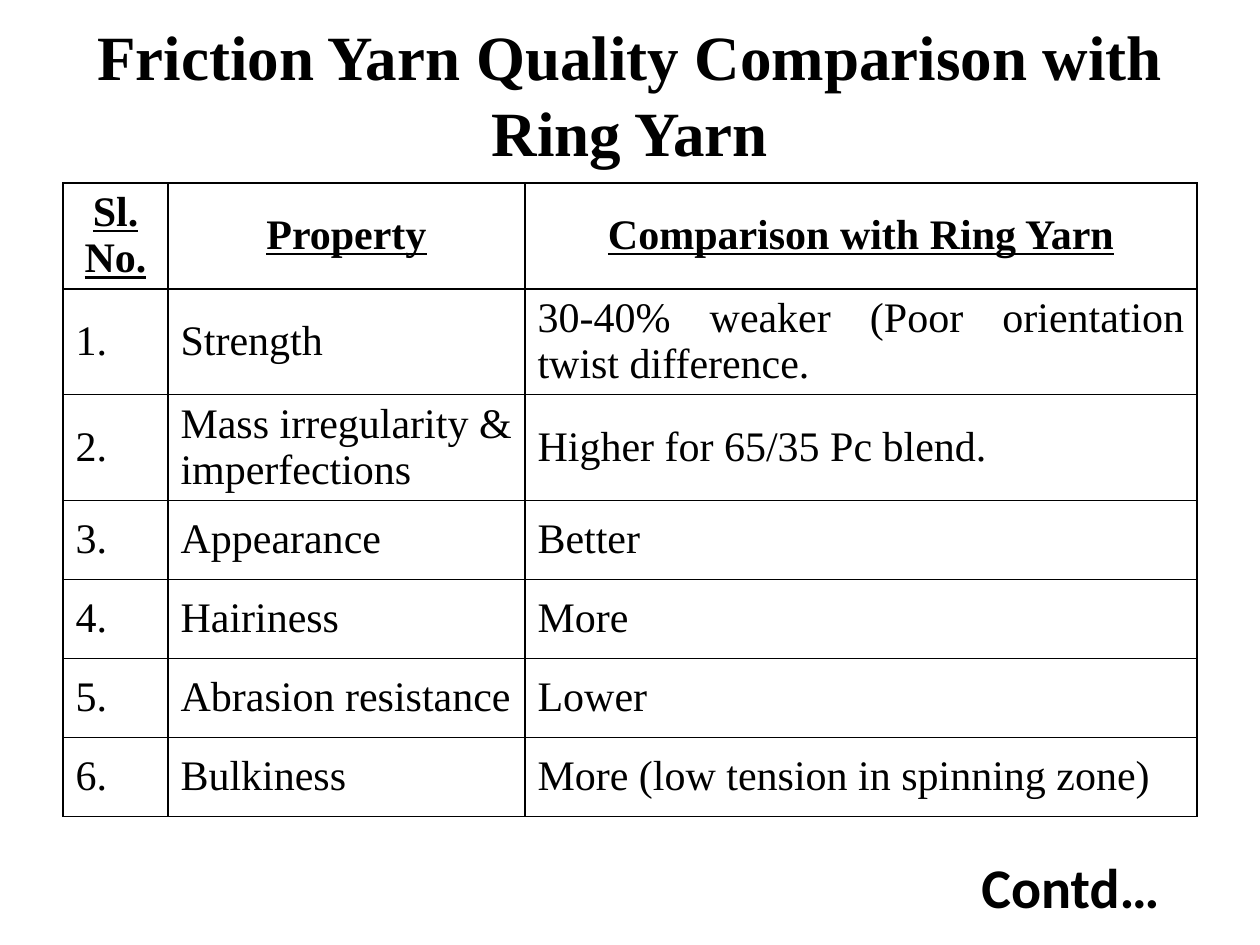
from lxml import etree
from pptx import Presentation, util as u
from pptx.dml.color import RGBColor
from pptx.enum import text
from pptx.oxml.ns import qn

COLORS = {"ink": "000000", "paper": "FFFFFF"}
SERIF, SANS = "Times New Roman", "Calibri"
LEFT, CENTER, JUSTIFY = text.PP_ALIGN.LEFT, text.PP_ALIGN.CENTER, text.PP_ALIGN.JUSTIFY
MIDDLE = text.MSO_ANCHOR.MIDDLE

HEADERS = ["Sl. No.", "Property", "Comparison with Ring Yarn"]
PROPERTIES = [
    ("Strength", "30-40% weaker (Poor orientation twist difference."),
    ("Mass irregularity & imperfections", "Higher for 65/35 Pc blend."),
    ("Appearance", "Better"),
    ("Hairiness", "More"),
    ("Abrasion resistance", "Lower"),
    ("Bulkiness", "More (low tension in spinning zone)"),
]


def px(n):
    return u.Emu(round(n * 914400 / 126))


def write(tf, words, align=LEFT, **font):
    tf.word_wrap = True
    p = tf.paragraphs[0]
    p.alignment = align
    r = p.add_run()
    r.text = words
    for name, value in font.items():
        setattr(r.font, name, value)
    r.font.color.rgb = RGBColor.from_string(COLORS["ink"])


def add_text(s, box, words, **font):
    tf = s.shapes.add_textbox(*map(px, box)).text_frame
    tf.vertical_anchor = MIDDLE
    write(tf, words, align=CENTER, bold=True, **font)


def set_borders(cell):
    """Draw a 1 pt line on all four sides; lines must precede the fill in tcPr."""
    tcPr = cell._tc.get_or_add_tcPr()
    for i, side in enumerate(("lnL", "lnR", "lnT", "lnB")):
        ln = etree.Element(qn(f"a:{side}"), w=str(u.Pt(1)))
        fill = etree.SubElement(ln, qn("a:solidFill"))
        etree.SubElement(fill, qn("a:srgbClr"), val=COLORS["ink"])
        tcPr.insert(i, ln)


def add_comparison_table(s, box, col_widths):
    rows = [HEADERS] + [(f"{n}.", *row) for n, row in enumerate(PROPERTIES, 1)]
    table = s.shapes.add_table(len(rows), len(HEADERS), *map(px, box)).table
    table.horz_banding = False
    for col, width in zip(table.columns, col_widths):
        col.width = px(width)
    for i, row in enumerate(rows):
        head = i == 0
        for j, words in enumerate(row):
            cell = table.cell(i, j)
            cell.vertical_anchor = MIDDLE
            cell.margin_top, cell.margin_bottom = px(2), px(3)
            cell.fill.solid()
            cell.fill.fore_color.rgb = RGBColor.from_string(COLORS["paper"])
            set_borders(cell)
            align = CENTER if head else JUSTIFY if (i, j) == (1, 2) else LEFT
            write(cell.text_frame, words, align, name=SERIF, size=u.Pt(24),
                  bold=head, underline=head)


def main():
    prs = Presentation()
    prs.slide_width, prs.slide_height = px(1260), px(945)
    s = prs.slides.add_slide(prs.slide_layouts[6])
    add_text(s, (63, 38, 1134, 110), "Friction Yarn Quality Comparison with Ring Yarn",
             name=SERIF, size=u.Pt(36))
    add_comparison_table(s, (63, 183, 1134, 7 * 79), (105, 357, 672))
    add_text(s, (955, 850, 231, 73), "Contd…", name=SANS, size=u.Pt(32))
    prs.save("out.pptx")


if __name__ == "__main__":
    main()
